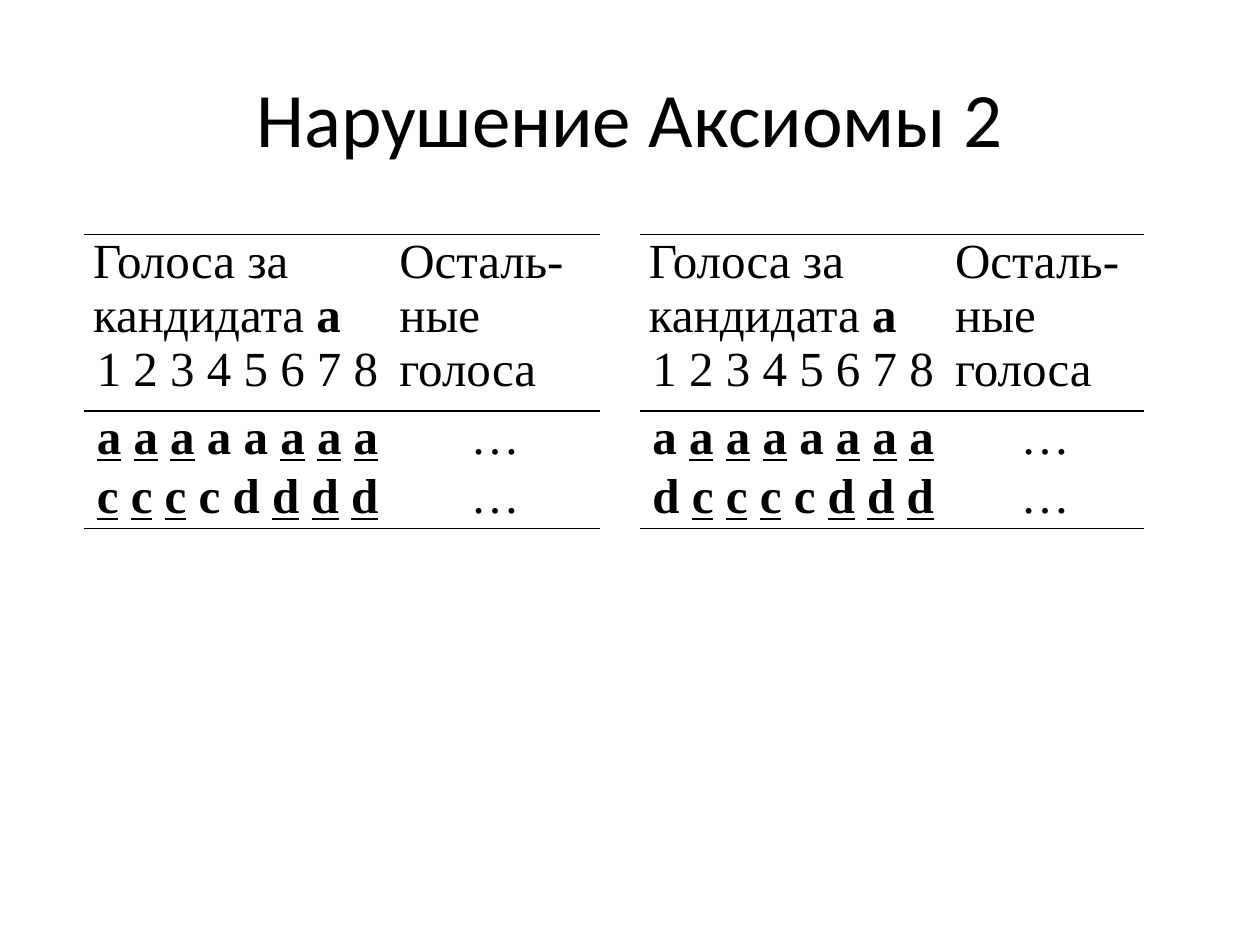
from lxml import etree
from pptx import Presentation
from pptx.dml.color import RGBColor
from pptx.enum import text
from pptx.oxml.ns import qn
from pptx.util import Inches, Pt

BLACK = RGBColor(0, 0, 0)
TITLE = "Нарушение Аксиомы 2"
VOTERS = "1 2 3 4 5 6 7 8"
OTHERS = ["Осталь-ные голоса", "…", "…"]

# Ballot rows hold one letter per voter; marked voters are underlined.
TABLES = [
    {"left": 0.67, "widths": (2.43, 1.66), "marked": {1, 2, 3, 6, 7, 8},
     "ballots": ["aaaaaaaa", "ccccdddd"]},
    {"left": 5.08, "widths": (2.43, 1.57), "marked": {2, 3, 4, 6, 7, 8},
     "ballots": ["aaaaaaaa", "dcccсddd"]},
]
TOP = 1.86
ROW_HEIGHTS = (1.29, 0.43, 0.43)


def add_run(p, words, size=28, font="Times New Roman", bold=False, underline=False):
    r = p.add_run()
    r.text = words
    r.font.size = Pt(size)
    r.font.name = font
    r.font.color.rgb = BLACK
    r.font.bold = bold
    r.font.underline = underline


def set_borders(cell, visible):
    """Draw the sides named in visible (T, B) in black and hide the others."""
    tc_pr = cell._tc.get_or_add_tcPr()
    for i, side in enumerate("LRTB"):
        ln = etree.Element(qn(f"a:ln{side}"), w=str(Pt(1)))
        if side in visible:
            fill = etree.SubElement(ln, qn("a:solidFill"))
            etree.SubElement(fill, qn("a:srgbClr"), val=str(BLACK))
        else:
            etree.SubElement(ln, qn("a:noFill"))
        tc_pr.insert(i, ln)


def add_ballot(p, letters, marked):
    p.alignment = text.PP_ALIGN.CENTER
    for voter, letter in enumerate(letters, 1):
        if voter > 1:
            add_run(p, " ", bold=True)
        add_run(p, letter, bold=True, underline=voter in marked)


def add_vote_table(s, left, widths, marked, ballots):
    table = s.shapes.add_table(
        len(ROW_HEIGHTS), len(widths), Inches(left), Inches(TOP),
        Inches(sum(widths)), Inches(sum(ROW_HEIGHTS))).table
    table.first_row = table.horz_banding = False
    for column, width in zip(table.columns, widths):
        column.width = Inches(width)
    for row, height, sides in zip(table.rows, ROW_HEIGHTS, ("TB", "T", "B")):
        row.height = Inches(height)
        for cell in row.cells:
            cell.margin_left = cell.margin_right = Inches(0.07)
            cell.margin_top = cell.margin_bottom = 0
            cell.fill.background()
            set_borders(cell, sides)

    tf = table.cell(0, 0).text_frame
    add_run(tf.paragraphs[0], "Голоса за кандидата ")
    add_run(tf.paragraphs[0], "a", bold=True)
    p = tf.add_paragraph()
    p.alignment = text.PP_ALIGN.CENTER
    add_run(p, VOTERS)

    for i, letters in enumerate(ballots, 1):
        add_ballot(table.cell(i, 0).text_frame.paragraphs[0], letters, marked)
    for i, words in enumerate(OTHERS):
        p = table.cell(i, 1).text_frame.paragraphs[0]
        p.alignment = text.PP_ALIGN.CENTER if i else text.PP_ALIGN.LEFT
        add_run(p, words)


def main():
    prs = Presentation()
    prs.slide_width, prs.slide_height = Inches(10), Inches(7.5)
    s = prs.slides.add_slide(prs.slide_layouts[6])

    tf = s.shapes.add_textbox(Inches(0.5), Inches(0.3), Inches(9), Inches(1.25)).text_frame
    tf.word_wrap = True
    tf.vertical_anchor = text.MSO_ANCHOR.MIDDLE
    tf.paragraphs[0].alignment = text.PP_ALIGN.CENTER
    add_run(tf.paragraphs[0], TITLE, size=44, font="Calibri")

    for votes in TABLES:
        add_vote_table(s, **votes)
    prs.save("out.pptx")


if __name__ == "__main__":
    main()
